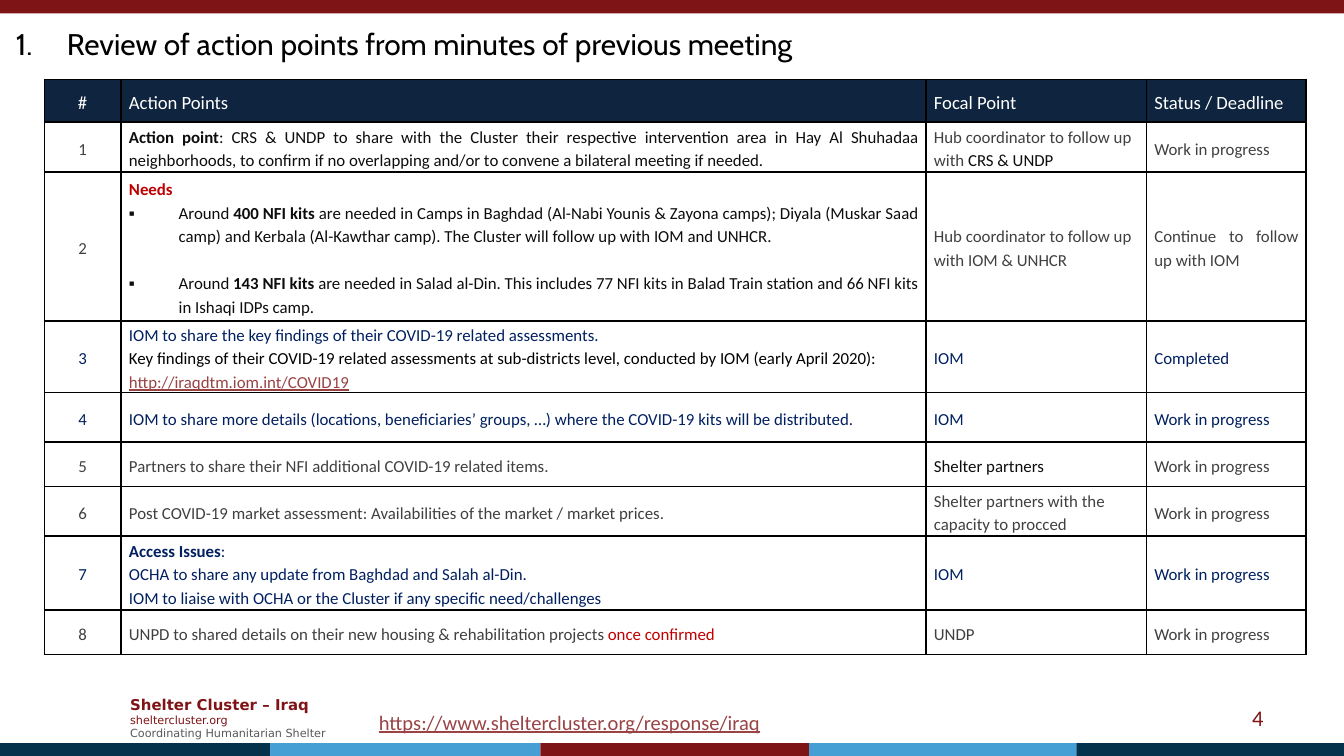
from lxml.etree import SubElement
from pptx import Presentation
from pptx.dml.color import RGBColor
from pptx.enum.shapes import MSO_SHAPE
from pptx.enum.text import MSO_ANCHOR, PP_ALIGN
from pptx.oxml.ns import qn
from pptx.util import Inches, Pt

MAROON, TEAL, SKY = "7F1416", "04314C", "459FD5"
GREY, INK, NAVY, RED, LINK = "404040", "0D0D0D", "002060", "C00000", "994345"
LEFT, CENTER, RIGHT, JUSTIFY = PP_ALIGN.LEFT, PP_ALIGN.CENTER, PP_ALIGN.RIGHT, PP_ALIGN.JUSTIFY
PROGRESS = "Work in progress"

TITLE = "Review of action points from minutes of previous meeting"
SITE = "https://www.sheltercluster.org/response/iraq"
PAGE = "4"
CLUSTER = [
    ("Shelter Cluster – Iraq", dict(size=8, color=MAROON, bold=True)),
    ("sheltercluster.org", dict(size=6, color=MAROON)),
    ("Coordinating Humanitarian Shelter", dict(size=6, color="595959")),
]
BARS = [(0, TEAL), (2.01, SKY), (4.02, MAROON), (6.02, SKY), (8.01, TEAL)]

COLUMNS = [0.57, 5.99, 1.64, 1.19]
HEADER = ["#", "Action Points", "Focal Point", "Status / Deadline"]
HEADER_HEIGHT = 0.32

BULLET = dict(bullet="▪", indent=0.37, color=INK)
ACTIONS = [
    (0.37, GREY, [
        ([("Action point", dict(bold=True)),
          ": CRS & UNDP to share with the Cluster their respective intervention area in Hay Al Shuhadaa "
          "neighborhoods, to confirm if no overlapping and/or to convene a bilateral meeting if needed."],
         dict(color=INK))],
     ["Hub coordinator to follow up with ", ("CRS & UNDP", dict(color=INK))], PROGRESS),
    (1.11, GREY, [
        ("Needs ", dict(color=RED, bold=True)),
        (["Around ", ("400 NFI kits", dict(bold=True)),
          " are needed in Camps in Baghdad (Al-Nabi Younis & Zayona camps); Diyala (Muskar Saad camp) "
          "and Kerbala (Al-Kawthar camp). The Cluster will follow up with IOM and UNHCR."], BULLET),
        (["Around ", ("143 NFI kits", dict(bold=True)),
          " are needed in Salad al-Din. This includes 77 NFI kits in Balad Train station "
          "and 66 NFI kits in Ishaqi IDPs camp."], dict(BULLET, before=12.6))],
     "Hub coordinator to follow up with IOM & UNHCR", "Continue to follow up with IOM"),
    (0.53, NAVY, [
        ("IOM to share the key findings of their COVID-19 related assessments.", dict(align=LEFT)),
        (["Key findings of their COVID-19 related assessments at sub-districts level, "
          "conducted by IOM (early April 2020): ",
          ("http://iraqdtm.iom.int/COVID19", dict(color=LINK, underline=True))],
         dict(color="000000", align=LEFT))],
     "IOM", "Completed"),
    (0.37, NAVY, [
        ("IOM to share more details (locations, beneficiaries’ groups, …) "
         "where the COVID-19 kits will be distributed.", {})],
     "IOM", PROGRESS),
    (0.33, GREY, [("Partners to share their NFI additional COVID-19 related items. ", {})],
     [("Shelter partners", dict(color=INK))], PROGRESS),
    (0.37, GREY, [
        ("Post COVID-19 market assessment: Availabilities of the market / market prices.", {})],
     "Shelter partners with the capacity to procced", PROGRESS),
    (0.55, NAVY, [
        ([("Access Issues", dict(bold=True)), ": "], {}),
        ("OCHA to share any update from Baghdad and Salah al-Din. ", {}),
        ("IOM to liaise with OCHA or the Cluster if any specific need/challenges", {})],
     "IOM", PROGRESS),
    (0.33, GREY, [
        (["UNPD to shared details on their new housing & rehabilitation projects ",
          ("once confirmed", dict(color=RED))], {})],
     "UNDP", PROGRESS),
]


def rgb(color):
    return RGBColor.from_string(color)


def write(frame, text, size=9, font="Calibri", color=INK, bold=False, underline=False,
          align=LEFT, spacing=None, before=None, bullet=None, numbered=False, indent=0.38):
    paragraph = frame.paragraphs[0]
    if paragraph.runs:
        paragraph = frame.add_paragraph()
    if bullet or numbered:
        properties = paragraph._p.get_or_add_pPr()
        properties.set("marL", str(Inches(indent)))
        properties.set("indent", str(Inches(-indent)))
        SubElement(properties, qn("a:buFont"), typeface=font)
        if numbered:
            SubElement(properties, qn("a:buAutoNum"), type="arabicPeriod")
        else:
            SubElement(properties, qn("a:buChar"), char=bullet)
    paragraph.alignment = align
    if spacing:
        paragraph.line_spacing = spacing
    if before:
        paragraph.space_before = Pt(before)
    for part in [text] if isinstance(text, str) else text:
        words, own = (part, {}) if isinstance(part, str) else part
        run = paragraph.add_run()
        run.text = words
        run.font.size = Pt(size)
        run.font.name = font
        run.font.bold = own.get("bold", bold)
        run.font.underline = own.get("underline", underline)
        run.font.color.rgb = rgb(own.get("color", color))


def add_frame(slide, left, top, width, height, anchor=MSO_ANCHOR.TOP, wrap=True):
    frame = slide.shapes.add_textbox(Inches(left), Inches(top), Inches(width), Inches(height)).text_frame
    frame.word_wrap = wrap
    frame.vertical_anchor = anchor
    return frame


def add_bar(slide, left, top, width, color):
    bar = slide.shapes.add_shape(MSO_SHAPE.RECTANGLE, Inches(left), Inches(top), Inches(width), Inches(0.1))
    bar.shadow.inherit = False
    bar.fill.solid()
    bar.fill.fore_color.rgb = rgb(color)
    bar.line.fill.background()


def fill_cell(cell, paragraphs, fill=None, **style):
    cell.margin_left = cell.margin_right = Inches(0.06)
    cell.margin_top, cell.margin_bottom = Inches(0.01), 0
    cell.vertical_anchor = MSO_ANCHOR.MIDDLE
    properties = cell._tc.get_or_add_tcPr()
    for side in ("a:lnL", "a:lnR", "a:lnT", "a:lnB"):
        border = SubElement(properties, qn(side), w=str(Pt(1)))
        SubElement(SubElement(border, qn("a:solidFill")), qn("a:srgbClr"), val="000000")
    if fill:
        cell.fill.solid()
        cell.fill.fore_color.rgb = rgb(fill)
    else:
        cell.fill.background()
    for text, own in paragraphs:
        write(cell.text_frame, text, **{"spacing": 1.15, **style, **own})


def add_action_table(slide):
    heights = [HEADER_HEIGHT] + [action[0] for action in ACTIONS]
    table = slide.shapes.add_table(len(heights), len(COLUMNS), Inches(0.33), Inches(0.59),
                                   Inches(sum(COLUMNS)), Inches(sum(heights))).table
    table.first_row = table.horz_banding = False
    for column, width in zip(table.columns, COLUMNS):
        column.width = Inches(width)
    for row, height in zip(table.rows, heights):
        row.height = Inches(height)
    for index, label in enumerate(HEADER):
        fill_cell(table.cell(0, index), [(label, {})], fill="0F243E", size=10, color="FFFFFF",
                  align=JUSTIFY if index else CENTER)
    for number, (_, color, points, focal, status) in enumerate(ACTIONS, 1):
        contents = [[(str(number), {})], points, [(focal, {})], [(status, {})]]
        for index, (paragraphs, align) in enumerate(zip(contents, (CENTER, JUSTIFY, LEFT, JUSTIFY))):
            fill_cell(table.cell(number, index), paragraphs, color=color, align=align)


def main():
    deck = Presentation()
    deck.slide_width = Inches(10)
    deck.slide_height = deck.slide_width * 9 // 16
    slide = deck.slides.add_slide(deck.slide_layouts[6])

    cluster = add_frame(slide, 0.87, 5.12, 1.73, 0.44, MSO_ANCHOR.MIDDLE)
    for text, style in CLUSTER:
        write(cluster, text, font="DejaVu Sans", **style)
    add_bar(slide, 0, 0, 10, MAROON)
    for left, color in BARS:
        add_bar(slide, left, 5.53, min(2.01, 10 - left), color)
    write(add_frame(slide, 2.72, 5.23, 3.09, 0.29, wrap=False), SITE, size=11, color=LINK, underline=True)
    write(add_frame(slide, 7.17, 5.19, 2.33, 0.3, MSO_ANCHOR.MIDDLE), PAGE, size=12, color=MAROON, align=RIGHT)
    write(add_frame(slide, 0.02, 0.14, 9.95, 0.37), TITLE, size=16, font="Cabin", color="000000", numbered=True)
    add_action_table(slide)
    deck.save("out.pptx")


if __name__ == "__main__":
    main()
